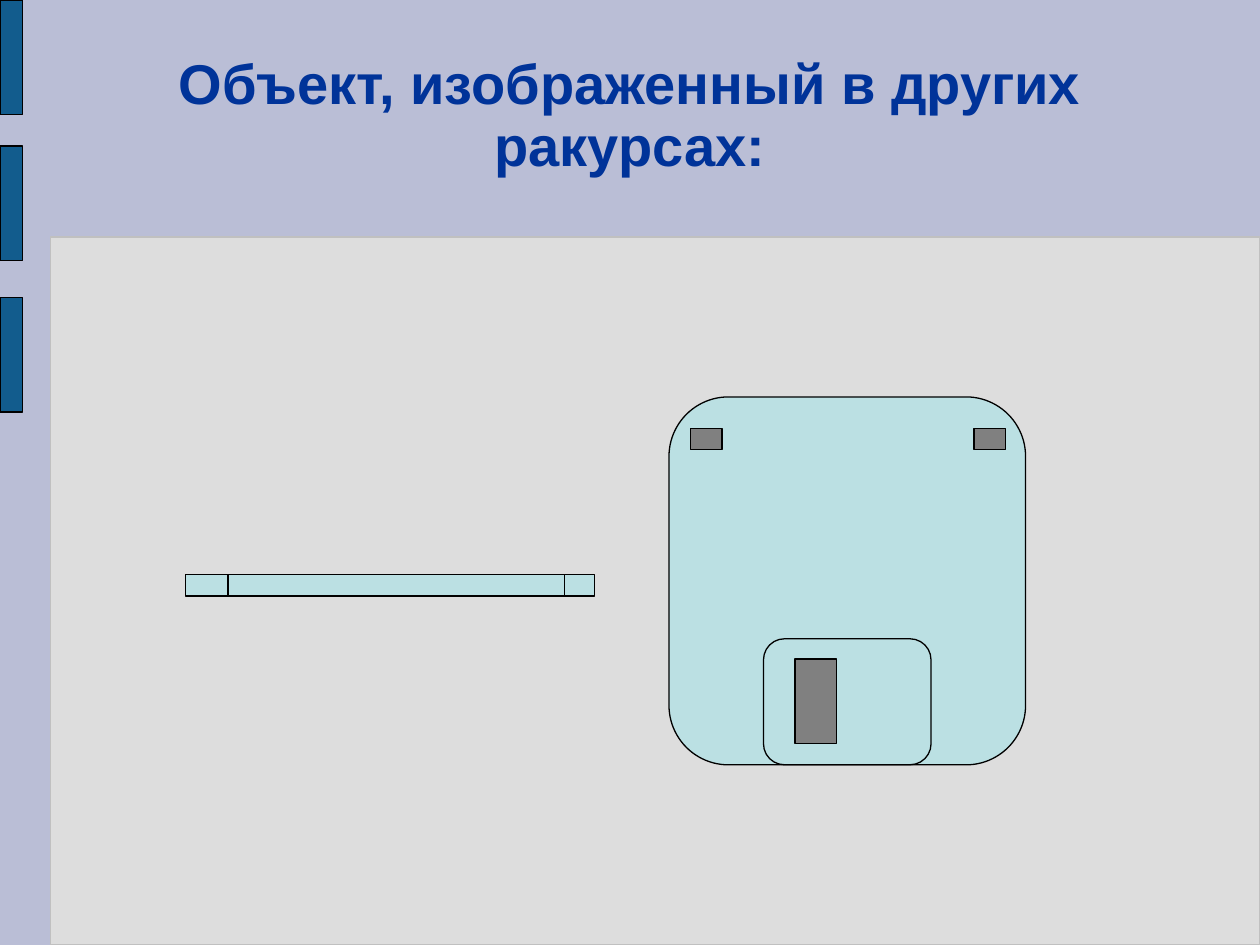
from pptx import Presentation
from pptx.dml.color import RGBColor
from pptx.enum.shapes import MSO_SHAPE
from pptx.enum.text import MSO_ANCHOR, PP_ALIGN
from pptx.util import Inches, Pt

BACKGROUND = RGBColor(0xBA, 0xBE, 0xD6)
PANEL = RGBColor(0xDD, 0xDD, 0xDD)
PANEL_LINE = RGBColor(0xC0, 0xC0, 0xC0)
TAB = RGBColor(0x12, 0x5C, 0x8D)
BODY = RGBColor(0xBB, 0xE0, 0xE3)
METAL = RGBColor(0x80, 0x80, 0x80)
BLACK = RGBColor(0x00, 0x00, 0x00)
TITLE = RGBColor(0x00, 0x33, 0x99)


class SlideBuilder:
    font = "Arial"
    line_width = Pt(0.75)

    def __init__(self, prs):
        self.slide = prs.slides.add_slide(prs.slide_layouts[5])
        fill = self.slide.background.fill
        fill.solid()
        fill.fore_color.rgb = BACKGROUND

    def title(self, text, left, top, width, height):
        sp = self.slide.shapes.title
        sp.left, sp.top = Inches(left), Inches(top)
        sp.width, sp.height = Inches(width), Inches(height)
        tf = sp.text_frame
        tf.text = text
        tf.word_wrap = True
        tf.vertical_anchor = MSO_ANCHOR.MIDDLE
        p = tf.paragraphs[0]
        p.alignment = PP_ALIGN.CENTER
        p.line_spacing = 0.93
        p.font.name = self.font
        p.font.size = Pt(32)
        p.font.bold = True
        p.font.color.rgb = TITLE

    def group(self):
        return self.slide.shapes.add_group_shape().shapes

    def shape(self, left, top, width, height, fill, line=BLACK,
              kind=MSO_SHAPE.RECTANGLE, shapes=None):
        if shapes is None:
            shapes = self.slide.shapes
        sp = shapes.add_shape(kind, Inches(left), Inches(top),
                              Inches(width), Inches(height))
        sp.shadow.inherit = False
        sp.fill.solid()
        sp.fill.fore_color.rgb = fill
        sp.line.color.rgb = line
        sp.line.width = self.line_width
        return sp

    def square_rounded(self, left, top, width, height, fill, line=BLACK):
        sp = self.shape(left, top, width, height, fill, line,
                        MSO_SHAPE.ROUNDED_RECTANGLE)
        sp.adjustments[0] = 0


def main():
    prs = Presentation()
    prs.slide_width, prs.slide_height = Inches(10), Inches(7.5)
    s = SlideBuilder(prs)

    s.square_rounded(0.4, 1.88, 9.6, 5.62, PANEL, PANEL_LINE)
    for top in (0, 1.16, 2.36):
        s.square_rounded(0, top, 0.18, 0.91, TAB)
    s.title("Объект, изображенный в других ракурсах:", 0.5, 0.3, 9, 1.25)

    front = s.group()
    for box in ((5.31, 3.15, 2.83, 2.92), (6.06, 5.07, 1.33, 1)):
        s.shape(*box, BODY, kind=MSO_SHAPE.FLOWCHART_ALTERNATE_PROCESS,
                shapes=front)
    s.shape(6.31, 5.23, 0.33, 0.67, METAL, shapes=front)
    for left in (5.48, 7.73):
        s.shape(left, 3.4, 0.25, 0.17, METAL, shapes=front)

    edge = s.group()
    for left, width in ((1.47, 3.25), (1.81, 2.67)):
        s.shape(left, 4.56, width, 0.17, BODY, shapes=edge)

    prs.save("out.pptx")


if __name__ == "__main__":
    main()
